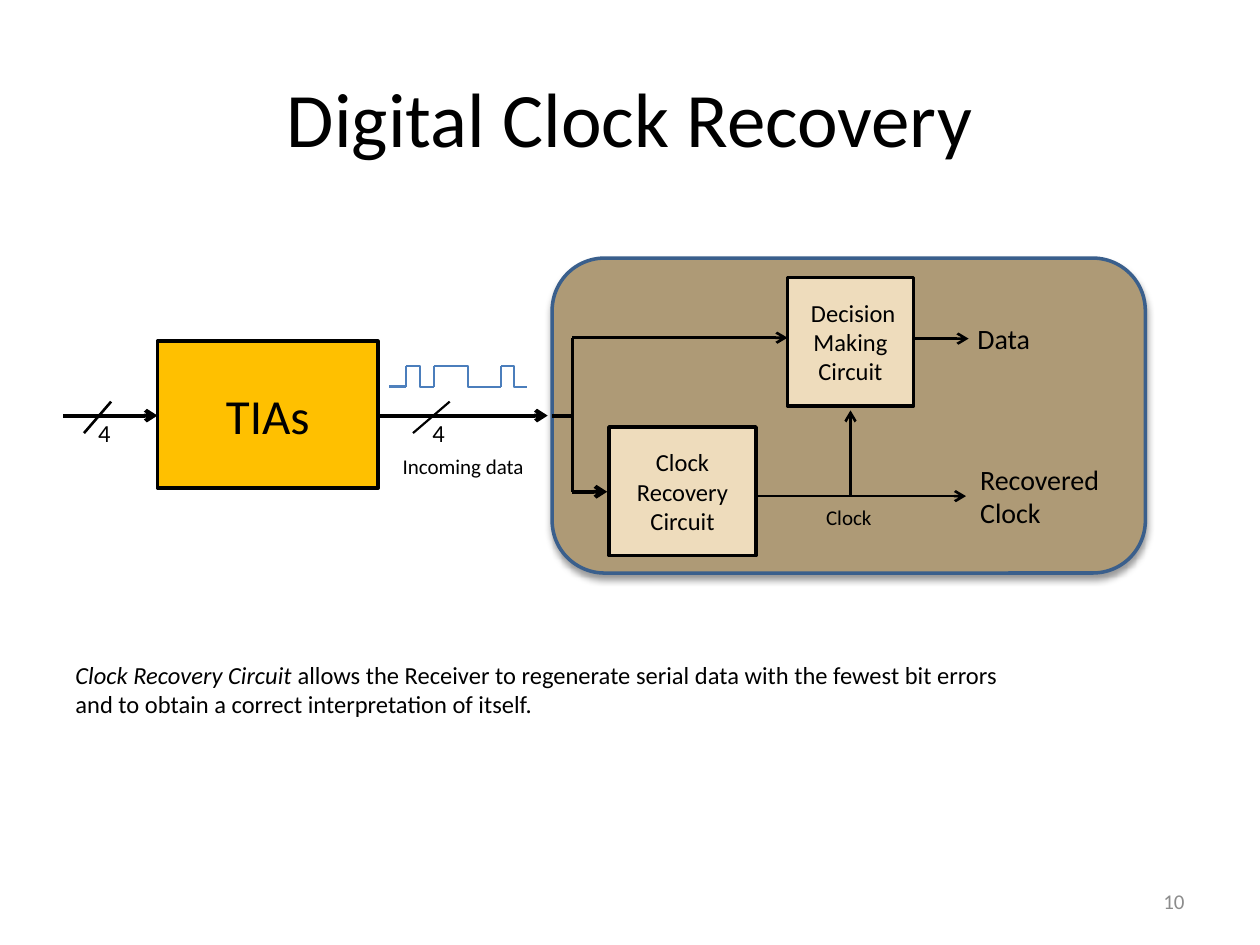
from dataclasses import dataclass

from lxml.etree import SubElement
from pptx import Presentation
from pptx.dml.color import RGBColor
from pptx.enum.shapes import MSO_CONNECTOR, MSO_SHAPE
from pptx.enum.text import MSO_ANCHOR, MSO_AUTO_SIZE, PP_ALIGN
from pptx.oxml.ns import qn
from pptx.shapes.autoshape import Shape
from pptx.slide import Slide
from pptx.text.text import TextFrame
from pptx.util import Pt


@dataclass(frozen=True)
class Theme:
    font: str = "Calibri"
    black: str = "000000"
    amber: str = "FFC000"
    sand: str = "EEDCBC"
    tan: str = "AE9A76"
    border: str = "3A5F8C"
    signal: str = "4B7EBC"
    lead_in: str = "4F81BD"
    grey: str = "8C8C8C"
    title: float = 44
    heading: float = 28
    label: float = 16
    body: float = 14
    small: float = 12


THEME = Theme()


@dataclass(frozen=True)
class Frame:
    left: float
    top: float
    width: float
    height: float


@dataclass(frozen=True)
class Run:
    text: str
    italic: bool = False


@dataclass(frozen=True)
class Block:
    frame: Frame
    fill: str
    text: str = ""
    size: float = THEME.body
    border: str = THEME.black
    preset: MSO_SHAPE = MSO_SHAPE.RECTANGLE


@dataclass(frozen=True)
class Label:
    frame: Frame
    paragraphs: tuple[tuple[Run, ...], ...]
    size: float
    wrap: bool = False
    grow: bool = True
    color: str = THEME.black
    align: PP_ALIGN = PP_ALIGN.LEFT
    anchor: MSO_ANCHOR = MSO_ANCHOR.TOP


@dataclass(frozen=True)
class Wire:
    start: tuple[float, float]
    end: tuple[float, float]
    width: float = 1.5
    arrow: bool = False
    color: str = THEME.black
    kind: MSO_CONNECTOR = MSO_CONNECTOR.STRAIGHT


def place(shape: Shape, frame: Frame) -> None:
    shape.left, shape.top = Pt(frame.left), Pt(frame.top)
    shape.width, shape.height = Pt(frame.width), Pt(frame.height)


def write(text_frame: TextFrame, paragraphs: tuple[tuple[Run, ...], ...], size: float,
          color: str, align: PP_ALIGN, anchor: MSO_ANCHOR) -> None:
    text_frame.vertical_anchor = anchor
    for index, runs in enumerate(paragraphs):
        paragraph = text_frame.add_paragraph() if index else text_frame.paragraphs[0]
        paragraph.alignment = align
        for item in runs:
            run = paragraph.add_run()
            run.text = item.text
            run.font.name = THEME.font
            run.font.size = Pt(size)
            run.font.italic = item.italic
            run.font.color.rgb = RGBColor.from_string(color)


def draw_block(slide: Slide, block: Block) -> Shape:
    frame = block.frame
    shape = slide.shapes.add_shape(
        block.preset, Pt(frame.left), Pt(frame.top), Pt(frame.width), Pt(frame.height))
    shape.shadow.inherit = False
    shape.fill.solid()
    shape.fill.fore_color.rgb = RGBColor.from_string(block.fill)
    shape.line.color.rgb = RGBColor.from_string(block.border)
    shape.line.width = Pt(2)
    if block.text:
        write(shape.text_frame, ((Run(block.text),),), block.size,
              THEME.black, PP_ALIGN.CENTER, MSO_ANCHOR.MIDDLE)
    return shape


def add_drop_shadow(shape: Shape) -> None:
    effects = shape.element.spPr.find(qn("a:effectLst"))
    shadow = SubElement(effects, qn("a:outerShdw"), blurRad=str(Pt(4)), dist=str(Pt(3)),
                        dir="5400000", rotWithShape="0")
    color = SubElement(shadow, qn("a:srgbClr"), val=THEME.black)
    SubElement(color, qn("a:alpha"), val="40000")


def draw_label(slide: Slide, label: Label) -> None:
    frame = label.frame
    shape = slide.shapes.add_textbox(
        Pt(frame.left), Pt(frame.top), Pt(frame.width), Pt(frame.height))
    shape.text_frame.word_wrap = label.wrap
    shape.text_frame.auto_size = (
        MSO_AUTO_SIZE.SHAPE_TO_FIT_TEXT if label.grow else MSO_AUTO_SIZE.NONE)
    write(shape.text_frame, label.paragraphs, label.size, label.color, label.align, label.anchor)


def draw_wire(slide: Slide, wire: Wire) -> None:
    connector = slide.shapes.add_connector(
        wire.kind, *(Pt(value) for value in wire.start + wire.end))
    connector.line.color.rgb = RGBColor.from_string(wire.color)
    connector.line.width = Pt(wire.width)
    if wire.arrow:
        SubElement(connector.line._get_or_add_ln(), qn("a:tailEnd"), type="arrow")
    SubElement(connector.element.spPr, qn("a:effectLst"))


def draw_waveform(slide: Slide, rises: tuple[float, ...], high: float, low: float) -> None:
    """Draw a pulse after each rising edge, falling halfway to the next one."""
    for left, right in zip(rises, rises[1:]):
        draw_wire(slide, Wire((left, low), (left, high), 1.25, color=THEME.signal))
        draw_wire(slide, Wire((left, high), (right, low), 1.25, color=THEME.signal,
                              kind=MSO_CONNECTOR.ELBOW))
    draw_wire(slide, Wire((rises[0], low), (rises[0] - 9.5, low), color=THEME.lead_in))


BUS_Y, SPLIT_X, DATA_Y, CLOCK_Y, RECOVERY_Y = 237.5, 327, 193, 283.5, 281

RECEIVER = Block(Frame(315.5, 147.5, 339, 180), THEME.tan, border=THEME.border,
                 preset=MSO_SHAPE.ROUNDED_RECTANGLE)
BLOCKS = (
    Block(Frame(90, 195, 126, 84), THEME.amber, "TIAs", THEME.heading),
    Block(Frame(348, 244, 84, 73.5), THEME.sand, "Clock Recovery Circuit"),
    Block(Frame(450, 158.5, 72, 73.5), THEME.sand, " Decision Making Circuit"),
)
WIRES = (
    Wire((36, BUS_Y), (90, BUS_Y), 2.25, True),
    Wire((48, 247.5), (63.5, 229.5)),
    Wire((217, BUS_Y), (313, BUS_Y), 2.25, True),
    Wire((236, 247.5), (257, 229.5), 1.25),
    Wire((315.5, BUS_Y), (SPLIT_X, BUS_Y), 2.25),
    Wire((SPLIT_X, BUS_Y), (SPLIT_X, RECOVERY_Y)),
    Wire((SPLIT_X, RECOVERY_Y), (347, RECOVERY_Y), 2.25, True),
    Wire((SPLIT_X, BUS_Y), (SPLIT_X, DATA_Y)),
    Wire((SPLIT_X, DATA_Y), (450, DATA_Y), arrow=True),
    Wire((522, 193.5), (553.5, 193.5), arrow=True),
    Wire((432, CLOCK_Y), (552, CLOCK_Y), arrow=True),
    Wire((486, CLOCK_Y), (486, 234.5), arrow=True),
)
LABELS = (
    *(Label(Frame(left, 235.5, 21.5, 24.5), ((Run("4"),),), THEME.body) for left in (49, 240)),
    Label(Frame(223, 255.5, 90, 21.5), ((Run("Incoming data"),),), THEME.small, wrap=True),
    Label(Frame(465, 285, 41, 21.5), ((Run("Clock"),),), THEME.small),
    Label(Frame(553, 260.5, 87, 46), ((Run("Recovered"),), (Run("Clock"),)), THEME.label),
    Label(Frame(551.5, 180, 44.5, 26.5), ((Run("Data"),),), THEME.label),
    Label(Frame(36, 373.5, 655, 41), (
        (Run("Clock Recovery Circuit ", italic=True),
         Run("allows the Receiver to regenerate serial data with the fewest bit errors")),
        (Run("and to obtain a correct interpretation of itself."),),
    ), THEME.body),
    Label(Frame(516, 500.5, 168, 28.5), ((Run("10"),),), THEME.small, wrap=True, grow=False,
          color=THEME.grey, align=PP_ALIGN.RIGHT, anchor=MSO_ANCHOR.MIDDLE),
)


def main() -> None:
    presentation = Presentation()
    presentation.slide_width, presentation.slide_height = Pt(720), Pt(540)
    slide = presentation.slides.add_slide(presentation.slide_layouts.get_by_name("Title Only"))

    title = slide.shapes.title
    place(title, Frame(36, 21.6, 648, 90))
    write(title.text_frame, ((Run("Digital Clock Recovery"),),), THEME.title,
          THEME.black, PP_ALIGN.CENTER, MSO_ANCHOR.MIDDLE)

    add_drop_shadow(draw_block(slide, RECEIVER))
    for block in BLOCKS:
        draw_block(slide, block)
    for wire in WIRES:
        draw_wire(slide, wire)
    draw_waveform(slide, rises=(232, 248, 286.5, 301), high=209, low=221)
    for label in LABELS:
        draw_label(slide, label)

    presentation.save("out.pptx")


if __name__ == "__main__":
    main()
